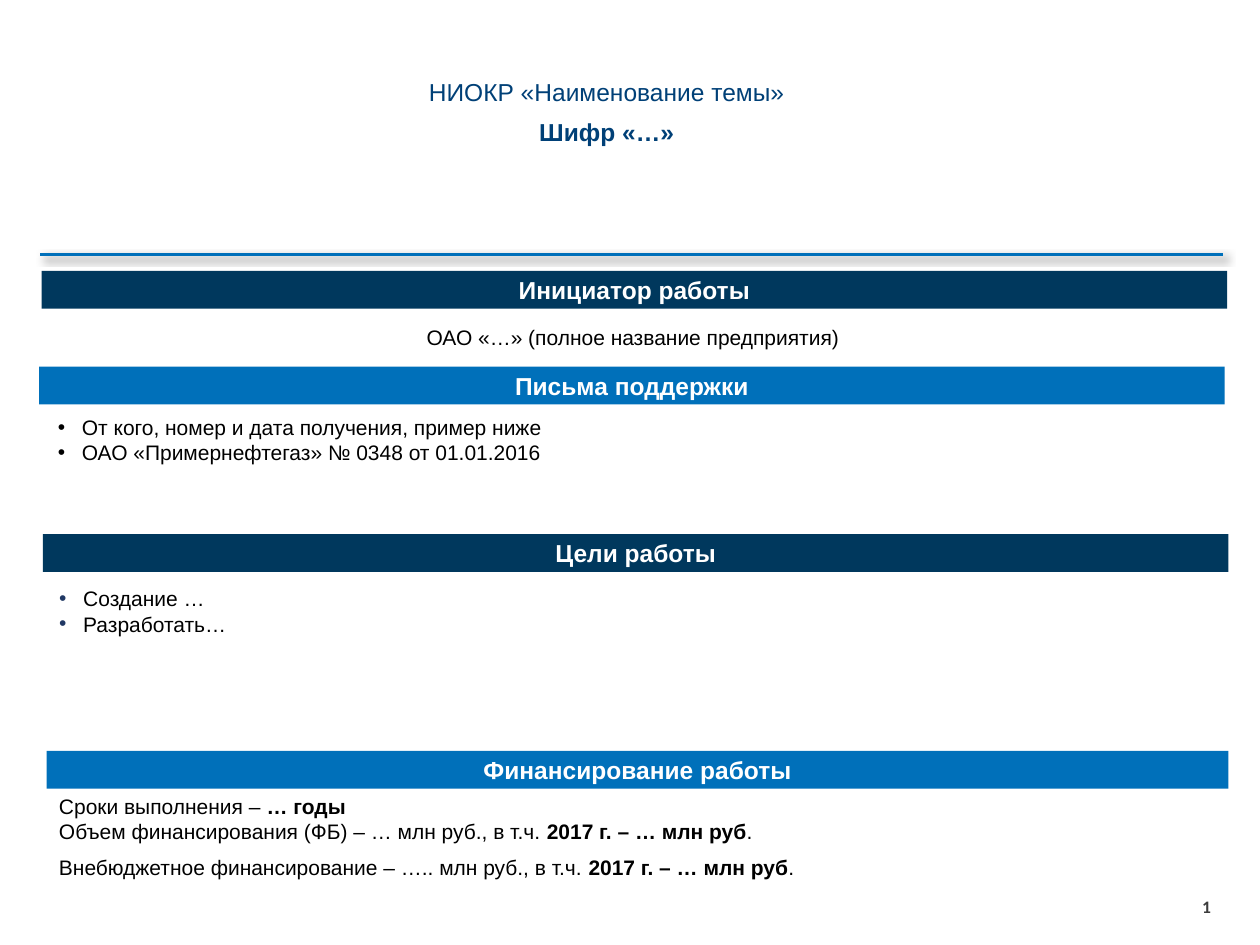
from lxml import etree
from pptx import Presentation
from pptx.dml.color import RGBColor
from pptx.enum.shapes import MSO_CONNECTOR as CONN, MSO_SHAPE as SHAPE
from pptx.enum.text import MSO_ANCHOR as ANCHOR, MSO_AUTO_SIZE as AUTO, PP_ALIGN as ALIGN
from pptx.oxml import parse_xml
from pptx.oxml.ns import nsdecls, qn
from pptx.util import Inches, Pt

NAVY, BLUE, TITLE, BULLET = "00385D", "0070BA", "004077", "203864"
BLACK, WHITE, GREY = "000000", "FFFFFF", "3C3C3C"


def rgb(value):
    return RGBColor.from_string(value)


class SlideBuilder:
    font = "Arial"
    heading_size = 14
    body_size = 12

    def __init__(self, prs, layout):
        self.s = prs.slides.add_slide(prs.slide_layouts[layout])

    def style(self, r, size, color, bold=False, font=None):
        r.font.name = font or self.font
        r.font.size = Pt(size)
        r.font.bold = bold
        r.font.color.rgb = rgb(color)

    def place(self, sp, box):
        sp.left, sp.top, sp.width, sp.height = map(Inches, box)
        tf = sp.text_frame
        tf.word_wrap = True
        tf.auto_size = AUTO.SHAPE_TO_FIT_TEXT
        tf.vertical_anchor = ANCHOR.TOP
        return tf

    def title(self, name, code, box):
        tf = self.place(self.s.shapes.title, box)
        tf.text = f"{name}\n{code}"
        for p, bold, gap in zip(tf.paragraphs, (False, True), (0, 6)):
            p.alignment = ALIGN.CENTER
            p.space_before = Pt(gap)
            self.style(p.runs[0], self.heading_size, TITLE, bold)

    def bullets(self, idx, items, box, bullet_color):
        tf = self.place(self.s.placeholders[idx], box)
        tf.text = "\n".join(items)
        for p in tf.paragraphs:
            pPr = p._p.get_or_add_pPr()
            pPr.set("marL", str(Inches(0.19)))
            pPr.set("indent", str(Inches(-0.19)))
            color = etree.SubElement(pPr, qn("a:buClr"))
            etree.SubElement(color, qn("a:srgbClr"), val=bullet_color)
            etree.SubElement(pPr, qn("a:buFont"), typeface=self.font)
            etree.SubElement(pPr, qn("a:buChar"), char="•")
            p.alignment = ALIGN.JUSTIFY
            p.space_before = Pt(0)
            self.style(p.runs[0], self.body_size, BLACK)

    def band(self, text, box, fill):
        sp = self.s.shapes.add_shape(SHAPE.RECTANGLE, *map(Inches, box))
        sp.shadow.inherit = False
        sp.fill.solid()
        sp.fill.fore_color.rgb = rgb(fill)
        sp.line.fill.background()
        tf = sp.text_frame
        tf.text = text
        tf.vertical_anchor = ANCHOR.MIDDLE
        p = tf.paragraphs[0]
        p.alignment = ALIGN.CENTER
        self.style(p.runs[0], self.heading_size, WHITE, True)

    def text(self, lines, box, align=ALIGN.LEFT):
        tf = self.place(self.s.shapes.add_textbox(*map(Inches, box)), box)
        for i, (gap, parts) in enumerate(lines):
            p = tf.add_paragraph() if i else tf.paragraphs[0]
            p.alignment = align
            p.space_before = Pt(gap)
            for part, bold in parts:
                r = p.add_run()
                r.text = part
                self.style(r, self.body_size, BLACK, bold)

    def rule(self, x1, x2, y):
        line = self.s.shapes.add_connector(
            CONN.STRAIGHT, Inches(x1), Inches(y), Inches(x2), Inches(y))
        line.line.color.rgb = rgb(BLUE)
        line.line.width = Pt(1.5)
        line._element.spPr.append(parse_xml(
            f'<a:effectLst {nsdecls("a")}><a:outerShdw blurRad="{Pt(4)}" dist="{Pt(3)}" '
            f'dir="2700000" algn="tl" rotWithShape="0"><a:srgbClr val="{BLACK}">'
            '<a:alpha val="40000"/></a:srgbClr></a:outerShdw></a:effectLst>'))

    def slide_number(self, box):
        tf = self.s.shapes.add_textbox(*map(Inches, box)).text_frame
        tf.margin_left = tf.margin_right = tf.margin_top = tf.margin_bottom = 0
        tf.text = "1"
        r = tf.paragraphs[0].runs[0]
        self.style(r, 10, GREY, True, "Calibri")
        field = r._r
        field.tag = qn("a:fld")
        field.set("id", "{B6F15528-21DE-4FAA-801E-634DDDAF4B2B}")
        field.set("type", "slidenum")


def main():
    prs = Presentation()
    prs.slide_width, prs.slide_height = Inches(10), Inches(7.5)
    b = SlideBuilder(prs, 3)
    b.slide_number((9.54, 7.11, 0.24, 0.18))
    b.rule(0.32, 9.71, 2.02)
    b.title("НИОКР «Наименование темы»", "Шифр «…»", (0.12, 0.56, 9.39, 0.66))

    bands = [
        ("Инициатор работы", 0.33, 2.15, 9.41, NAVY),
        ("Письма поддержки", 0.31, 2.91, 9.41, BLUE),
        ("Цели работы", 0.34, 4.24, 9.41, NAVY),
        ("Финансирование работы", 0.37, 5.96, 9.38, BLUE),
    ]
    for text, x, y, width, fill in bands:
        b.band(text, (x, y, width, 0.3), fill)

    b.text([(0, [("ОАО «…» (полное название предприятия)", False)])],
           (0.34, 2.53, 9.37, 0.3), ALIGN.CENTER)
    b.bullets(1, ["От кого, номер и дата получения, пример ниже",
                  "ОАО «Примернефтегаз» № 0348 от 01.01.2016"],
              (0.36, 3.24, 9.43, 0.5), BLACK)
    b.bullets(2, ["Создание …", "Разработать…"], (0.37, 4.6, 9.35, 0.5), BULLET)

    budget = [("2017 г. – … млн руб", True), (".", False)]
    b.text([
        (0, [("Сроки выполнения – ", False), ("… годы", True)]),
        (0, [("Объем финансирования (ФБ) – … млн руб., в т.ч. ", False), *budget]),
        (6, [("Внебюджетное финансирование – ….. млн руб., в т.ч. ", False), *budget]),
    ], (0.37, 6.25, 9.44, 0.79))
    prs.save("out.pptx")


if __name__ == "__main__":
    main()
